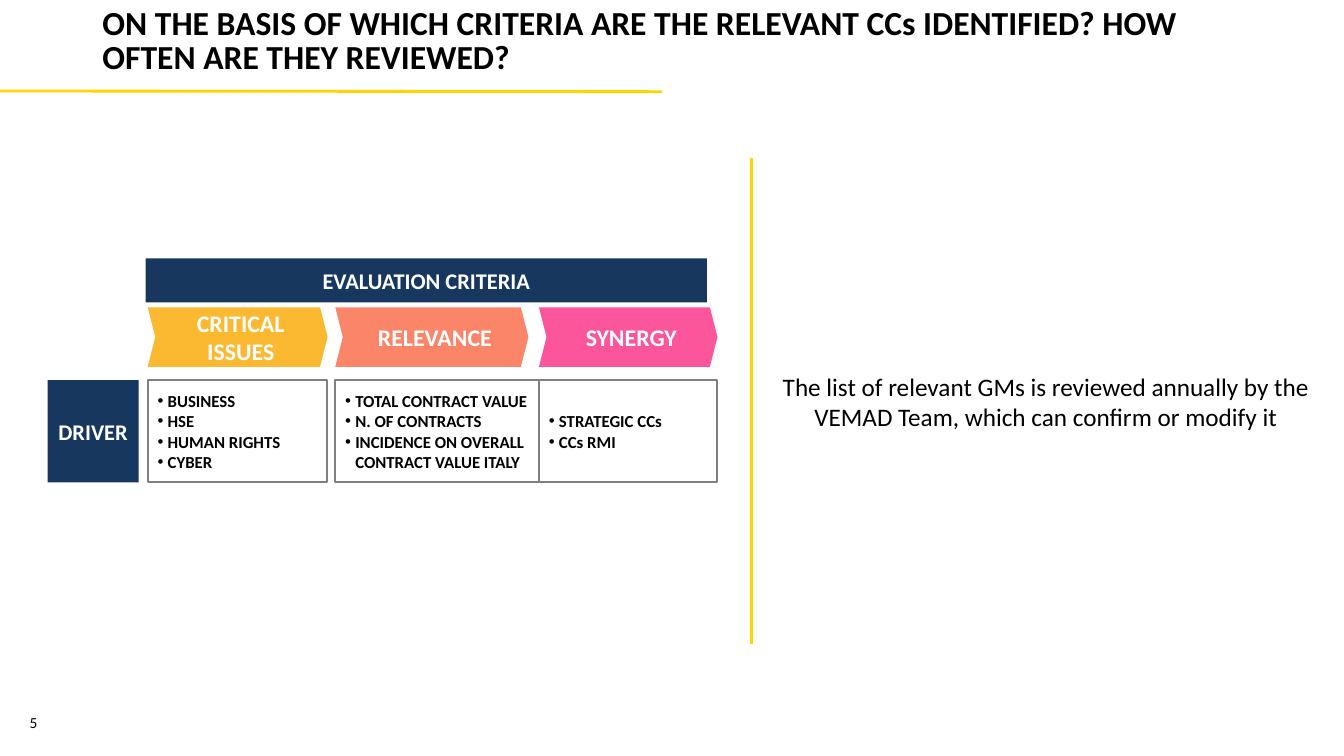
from lxml import etree
from pptx import Presentation
from pptx.dml.color import RGBColor
from pptx.enum.shapes import MSO_CONNECTOR, MSO_SHAPE
from pptx.enum.text import MSO_ANCHOR, MSO_AUTO_SIZE, PP_ALIGN
from pptx.oxml.ns import qn
from pptx.util import Pt

RECT = MSO_SHAPE.RECTANGLE
LINE = MSO_CONNECTOR.STRAIGHT
TOP, MID, LOW = MSO_ANCHOR.TOP, MSO_ANCHOR.MIDDLE, MSO_ANCHOR.BOTTOM
LEFT, MIDDLE = PP_ALIGN.LEFT, PP_ALIGN.CENTER
FIXED = MSO_AUTO_SIZE.NONE

FONT = "Calibri"
HUE = {
    "black": "000000", "white": "FFFFFF", "gold": "FFD500", "navy": "17375E",
    "gray": "808080", "amber": "FBB831", "coral": "FB8569", "pink": "FB569C",
}

# Label, colour, left, arrow width, box width, drivers
CRITERIA = [
    ("CRITICAL ISSUES", "amber", 105.5, 128.5, 128,
     ["BUSINESS", "HSE", "HUMAN RIGHTS", "CYBER"]),
    ("RELEVANCE", "coral", 239.5, 138, 145.5,
     ["TOTAL CONTRACT VALUE", "N. OF CONTRACTS",
      "INCIDENCE ON OVERALL CONTRACT VALUE ITALY"]),
    ("SYNERGY", "pink", 385, 127.5, 127.5, ["STRATEGIC CCs", "CCs RMI"]),
]


def rgb(name):
    return RGBColor.from_string(HUE[name])


def add_bullet(para):
    props = para._p.get_or_add_pPr()
    props.set("marL", str(Pt(7.2)))
    props.set("indent", str(-Pt(7.2)))
    tint = etree.SubElement(props, qn("a:buClr"))
    etree.SubElement(tint, qn("a:srgbClr")).set("val", HUE["black"])
    etree.SubElement(props, qn("a:buFont")).set("typeface", "Arial")
    etree.SubElement(props, qn("a:buChar")).set("char", "•")


def write(shape, *lines, size=16, color="black", bold=False, align=LEFT,
          anchor=MID, pad=(7.2, 7.2, 7.2, 7.2), bullet=False, pitch=None):
    frame = shape.text_frame
    frame.word_wrap = True
    frame.auto_size = FIXED
    frame.vertical_anchor = anchor
    (frame.margin_left, frame.margin_top,
     frame.margin_right, frame.margin_bottom) = map(Pt, pad)
    for i, line in enumerate(lines):
        para = frame.add_paragraph() if i else frame.paragraphs[0]
        para.alignment = align
        if pitch:
            para.line_spacing = Pt(pitch)
        if bullet:
            add_bullet(para)
        run = para.add_run()
        run.text = line
        font = run.font
        font.name, font.size, font.bold = FONT, Pt(size), bold
        font.color.rgb = rgb(color)


def paint(shape, fill=None, edge=None):
    shape.shadow.inherit = False
    if fill:
        shape.fill.solid()
        shape.fill.fore_color.rgb = rgb(fill)
    else:
        shape.fill.background()
    if edge:
        shape.line.color.rgb = rgb(edge)
        shape.line.width = Pt(1.5)
    else:
        shape.line.fill.background()


def add_rect(slide, box, fill=None, edge=None):
    shape = slide.shapes.add_shape(RECT, *map(Pt, box))
    paint(shape, fill, edge)
    return shape


def add_arrow(slide, box, fill):
    x, y, w, h = box
    notch = 5.4
    points = [(x + notch, y + h / 2), (x, y + h), (x + w - notch, y + h),
              (x + w, y + h / 2), (x + w - notch, y)]
    form = slide.shapes.build_freeform(Pt(x), Pt(y), 1.0)
    form.add_line_segments([(Pt(a), Pt(b)) for a, b in points], close=True)
    shape = form.convert_to_shape()
    paint(shape, fill)
    return shape


def add_rule(slide, ends, width):
    rule = slide.shapes.add_connector(LINE, *map(Pt, ends))
    rule.line.color.rgb = rgb("gold")
    rule.line.width = Pt(width)
    etree.SubElement(rule._element.spPr, qn("a:effectLst"))


def add_text(slide, box, text, **form):
    write(slide.shapes.add_textbox(*map(Pt, box)), text, **form)


def add_head(slide, box):
    x, y, w, h = box
    add_rule(slide, (x, y + 65, x + 473, y + 65.5), 2)
    title = slide.shapes.title
    title.left, title.top, title.width, title.height = map(
        Pt, (x + 66, y, w - 115, h))
    write(title, "ON THE BASIS OF WHICH CRITERIA ARE THE RELEVANT CCs "
          "IDENTIFIED? HOW OFTEN ARE THEY REVIEWED?", size=24, bold=True,
          pad=(7.2, 3.6, 7.2, 3.6), pitch=24)


def add_grid(slide, box):
    x, y, w, h = box
    white = {"color": "white", "bold": True, "align": MIDDLE}
    deep = 73
    low = y + h - deep
    # Column heads and their drivers
    for label, hue, left, wide, span, items in CRITERIA:
        dx = x + left - 34
        arrow = add_arrow(slide, (dx, y + 35, wide, 42.5), hue)
        write(arrow, label, size=17, pad=(11.5, 7.2, 7.2, 7.2), **white)
        cell = add_rect(slide, (dx, low, span, deep), edge="gray")
        write(cell, *items, size=12, bold=True, bullet=True)
    # Row label and top banner
    write(add_rect(slide, (x, low, 65, deep), "navy"), "DRIVER", **white)
    bar = add_rect(slide, (x + 70, y, w - 77.5, 31.5), "navy")
    write(bar, "EVALUATION CRITERIA", **white)


def add_side(slide, box):
    x, y, w, h = box
    add_rule(slide, (x, y, x, y + h), 2.25)
    add_text(slide, (x + 11.5, y + 148.5, w - 11.5, 51),
             "The list of relevant GMs is reviewed annually by the VEMAD "
             "Team, which can confirm or modify it", size=18, align=MIDDLE,
             anchor=TOP, pad=(7.2, 3.6, 7.2, 3.6))


def add_foot(slide, box):
    add_text(slide, box, "5", size=11, align=MIDDLE, anchor=LOW,
             pad=(7.2, 3.6, 7.2, 3.6))


def main():
    deck = Presentation()
    deck.slide_width, deck.slide_height = Pt(960), Pt(540)
    slide = deck.slides.add_slide(deck.slide_layouts[5])
    add_head(slide, (0, 0, 960, 61))
    add_grid(slide, (34, 184.5, 478.5, 160))
    add_side(slide, (536.5, 113, 409.5, 347))
    add_foot(slide, (0, 500, 48, 26))
    deck.save("out.pptx")


if __name__ == "__main__":
    main()
